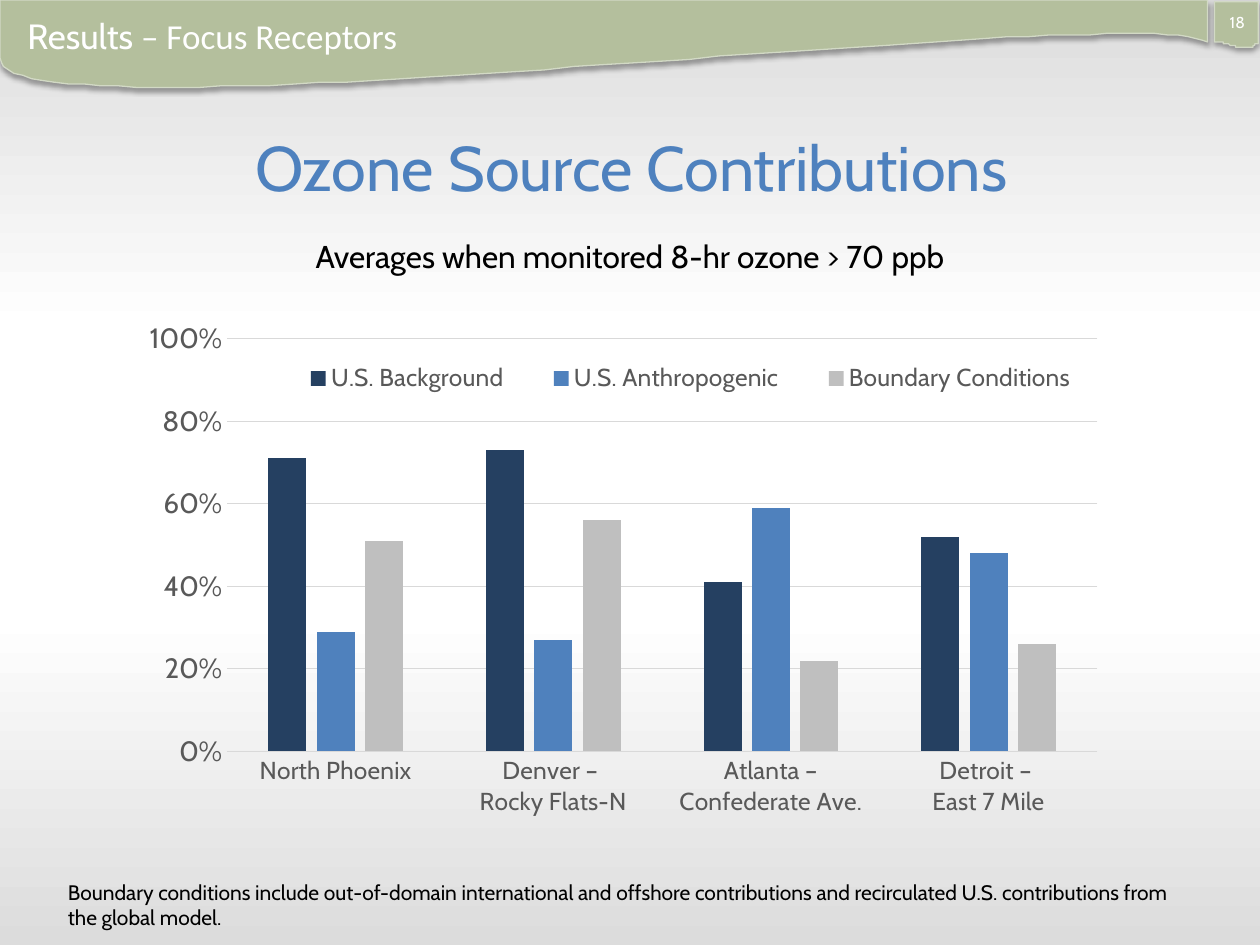
from dataclasses import dataclass

import pptx
import pptx.chart.data
import pptx.dml.color
import pptx.enum.chart
import pptx.enum.text
import pptx.oxml
import pptx.oxml.ns
import pptx.util

Pt = pptx.util.Pt
qn = pptx.oxml.ns.qn
ALIGN = pptx.enum.text.PP_ALIGN
ANCHOR = pptx.enum.text.MSO_ANCHOR
CHART_ENUM = pptx.enum.chart

FONT = "Cabin"
WHITE, BLACK, BLUE = "FFFFFF", "000000", "4E81BE"
SAGE, SAGE_EDGE = "B4BF9D", "D2D9C5"
AXIS_TEXT, GRID = "595959", "D9D9D9"
Point = tuple[float, float]


@dataclass
class Run:
    text: str
    font: str = FONT


@dataclass
class Label:
    left: float
    top: float
    width: float
    height: float
    runs: list[Run]
    size: float
    color: str
    align: ALIGN = ALIGN.CENTER
    anchor: ANCHOR = ANCHOR.TOP


@dataclass
class Banner:
    """Straight corners, then a curve from the last corner back to the left edge."""
    corners: list[Point]
    controls: tuple[Point, Point]
    end: Point


@dataclass
class Source:
    name: str
    shares: list[float]
    color: str


BANNERS = [
    Banner([(0, 0), (689.76, 0), (689.76, 23.76)],
           ((643.68, -0.72), (0, 84.24)), (0, 33.12)),
    Banner([(694.08, 0.72), (719.28, 0.72), (719.28, 23.76)],
           ((712.08, 31.68), (702.72, 23.76)), (694.08, 23.76)),
]

LABELS = [
    Label(694, 3.6, 26, 23.8, [Run("18")], 9, WHITE),
    Label(0.7, 69.8, 720, 50.4, [Run("Ozone Source Contributions")], 36, BLUE,
          anchor=ANCHOR.MIDDLE),
    Label(0, 131.8, 720, 28.8,
          [Run("Averages when monitored 8-hr ozone > 70 ppb")], 18, BLACK),
    Label(8.6, 5, 334.8, 31.7,
          [Run("Results "), Run("– Focus Receptors", "Calibri")], 20, WHITE, ALIGN.LEFT),
    Label(31.7, 499, 656.6, 36,
          [Run("Boundary conditions include out-of-domain international and offshore "
               "contributions and recirculated U.S. contributions from the global model.")],
          12, BLACK, ALIGN.LEFT),
]

RECEPTORS = ["North Phoenix", "Denver – \nRocky Flats-N",
             "Atlanta – Confederate Ave.", "Detroit – \nEast 7 Mile"]
SOURCES = [
    Source("U.S. Background", [0.71, 0.73, 0.41, 0.52], "254061"),
    Source("U.S. Anthropogenic", [0.29, 0.27, 0.59, 0.48], "4F81BD"),
    Source("Boundary Conditions", [0.51, 0.56, 0.22, 0.26], "BFBFBF"),
]


def rgb(value: str) -> pptx.dml.color.RGBColor:
    return pptx.dml.color.RGBColor.from_string(value)


def parse(tag: str, body: str):
    """Build a drawing or chart element from its tag and inner XML."""
    prefix = tag.split(":")[0]
    declaration = pptx.oxml.ns.nsdecls(*dict.fromkeys((prefix, "a")))
    return pptx.oxml.parse_xml(f"<{tag} {declaration}>{body}</{tag}>")


def set_background(slide) -> None:
    fill = slide.background.fill
    fill.gradient()
    fill.gradient_angle = 270
    stops = [(0, "DCDCDC"), (35, WHITE), (65, WHITE), (100, "DCDCDC")]
    body = "".join(f'<a:gs pos="{pos * 1000}"><a:srgbClr val="{color}"/></a:gs>'
                   for pos, color in stops)
    old_stops = slide.element.find(".//" + qn("a:gsLst"))
    old_stops.getparent().replace(old_stops, parse("a:gsLst", body))


def curve_points(start: Point, controls: tuple[Point, Point], end: Point,
                 steps: int = 60) -> list[Point]:
    def at(t: float) -> Point:
        weights = ((1 - t) ** 3, 3 * t * (1 - t) ** 2, 3 * t * t * (1 - t), t ** 3)
        knots = (start, *controls, end)
        return (sum(w * k[0] for w, k in zip(weights, knots)),
                sum(w * k[1] for w, k in zip(weights, knots)))
    return [at(step / steps) for step in range(1, steps + 1)]


def draw_banner(slide, banner: Banner) -> None:
    first, *others = banner.corners
    outline = others + curve_points(others[-1], banner.controls, banner.end)
    builder = slide.shapes.build_freeform(*first, scale=float(Pt(1)))
    builder.add_line_segments(outline, close=True)
    wave = builder.convert_to_shape()
    wave.fill.solid()
    wave.fill.fore_color.rgb = rgb(SAGE)
    wave.line.color.rgb = rgb(SAGE_EDGE)
    wave.line.width = Pt(0.75)
    wave.shadow.inherit = False
    wave.element.spPr.find(qn("a:effectLst")).append(parse(
        "a:outerShdw",
        '<a:srgbClr val="000000"><a:alpha val="35000"/></a:srgbClr>'))
    shadow = wave.element.spPr.find(".//" + qn("a:outerShdw"))
    for key, value in (("blurRad", Pt(3.1)), ("dist", Pt(1.8)), ("dir", 90 * 60000)):
        shadow.set(key, str(int(value)))


def draw_label(slide, label: Label) -> None:
    box = slide.shapes.add_textbox(Pt(label.left), Pt(label.top),
                                   Pt(label.width), Pt(label.height))
    frame = box.text_frame
    frame.word_wrap = True
    frame.vertical_anchor = label.anchor
    paragraph = frame.paragraphs[0]
    paragraph.alignment = label.align
    for part in label.runs:
        run = paragraph.add_run()
        run.text = part.text
        style_font(run.font, label.size, label.color, part.font)


def style_font(font, size: float, color: str, name: str = FONT) -> None:
    font.name = name
    font.size = Pt(size)
    font.color.rgb = rgb(color)


def manual_layout(x: float, y: float, w: float, h: float, inner: bool = False):
    body = '<c:layoutTarget val="inner"/>' if inner else ""
    body += '<c:xMode val="edge"/><c:yMode val="edge"/>'
    body += "".join(f'<c:{key} val="{value}"/>'
                    for key, value in zip("xywh", (x, y, w, h)))
    return parse("c:layout", f"<c:manualLayout>{body}</c:manualLayout>")


def set_layout(parent, layout, index: int) -> None:
    for old in parent.findall(qn("c:layout")):
        parent.remove(old)
    parent.insert(index, layout)


def draw_chart(slide) -> None:
    data = pptx.chart.data.CategoryChartData(number_format="0%")
    data.categories = RECEPTORS
    for source in SOURCES:
        data.add_series(source.name, source.shares)
    chart = slide.shapes.add_chart(CHART_ENUM.XL_CHART_TYPE.COLUMN_CLUSTERED, Pt(73.4),
                                   Pt(176.4), Pt(573.8), Pt(306.7), data).chart
    chart.has_title = False
    style_font(chart.font, 10, BLACK)

    # Columns
    plot = chart.plots[0]
    plot.vary_by_categories = False
    plot.gap_width, plot.overlap = 219, -27
    for series, source in zip(plot.series, SOURCES):
        series.format.fill.solid()
        series.format.fill.fore_color.rgb = rgb(source.color)

    # Axes
    receptors, shares = chart.category_axis, chart.value_axis
    for axis, size in ((receptors, 14), (shares, 16)):
        axis.major_tick_mark = axis.minor_tick_mark = CHART_ENUM.XL_TICK_MARK.NONE
        style_font(axis.tick_labels.font, size, AXIS_TEXT)
    shares.minimum_scale, shares.maximum_scale, shares.major_unit = 0, 1, 0.2
    shares.tick_labels.number_format = "0%"
    shares.tick_labels.number_format_is_linked = False
    shares.format.line.fill.background()
    for line in (receptors.format.line, shares.major_gridlines.format.line):
        line.color.rgb = rgb(GRID)
        line.width = Pt(0.75)

    # Legend inside the plot, under the top gridline
    chart.has_legend = True
    legend = chart.legend
    legend.position = CHART_ENUM.XL_LEGEND_POSITION.BOTTOM
    legend.include_in_layout = False
    style_font(legend.font, 14, AXIS_TEXT)
    set_layout(legend._element, manual_layout(0.14, 0.09, 0.84, 0.08), 1)
    plot_area = chart._chartSpace.chart.plotArea
    set_layout(plot_area, manual_layout(0.098, 0.056, 0.867, 0.769, inner=True), 0)


def main() -> None:
    deck = pptx.Presentation()
    deck.slide_width, deck.slide_height = Pt(720), Pt(540)
    slide = deck.slides.add_slide(deck.slide_layouts[6])
    set_background(slide)
    for banner in BANNERS:
        draw_banner(slide, banner)
    for label in LABELS:
        draw_label(slide, label)
    draw_chart(slide)
    deck.save("out.pptx")


if __name__ == "__main__":
    main()
